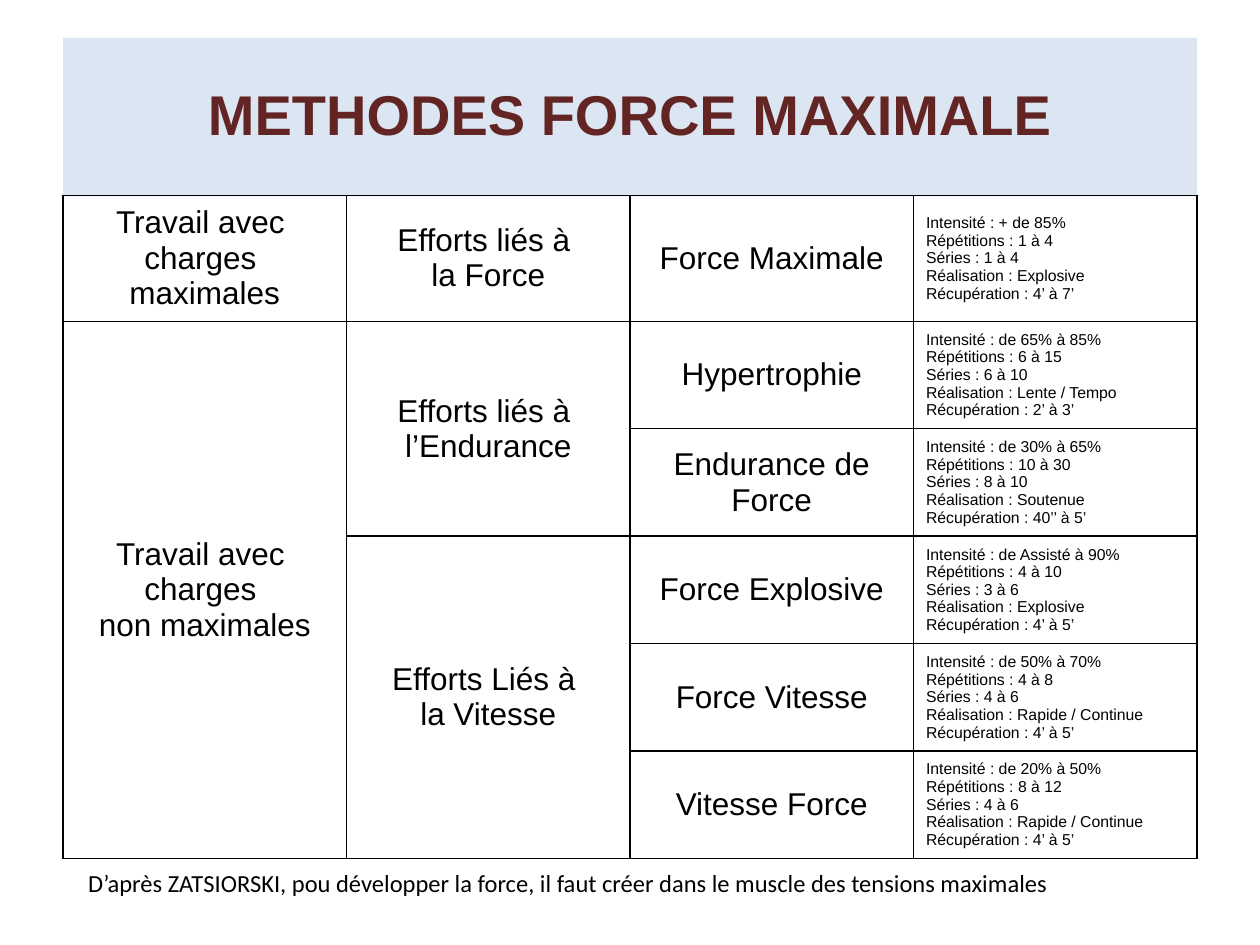
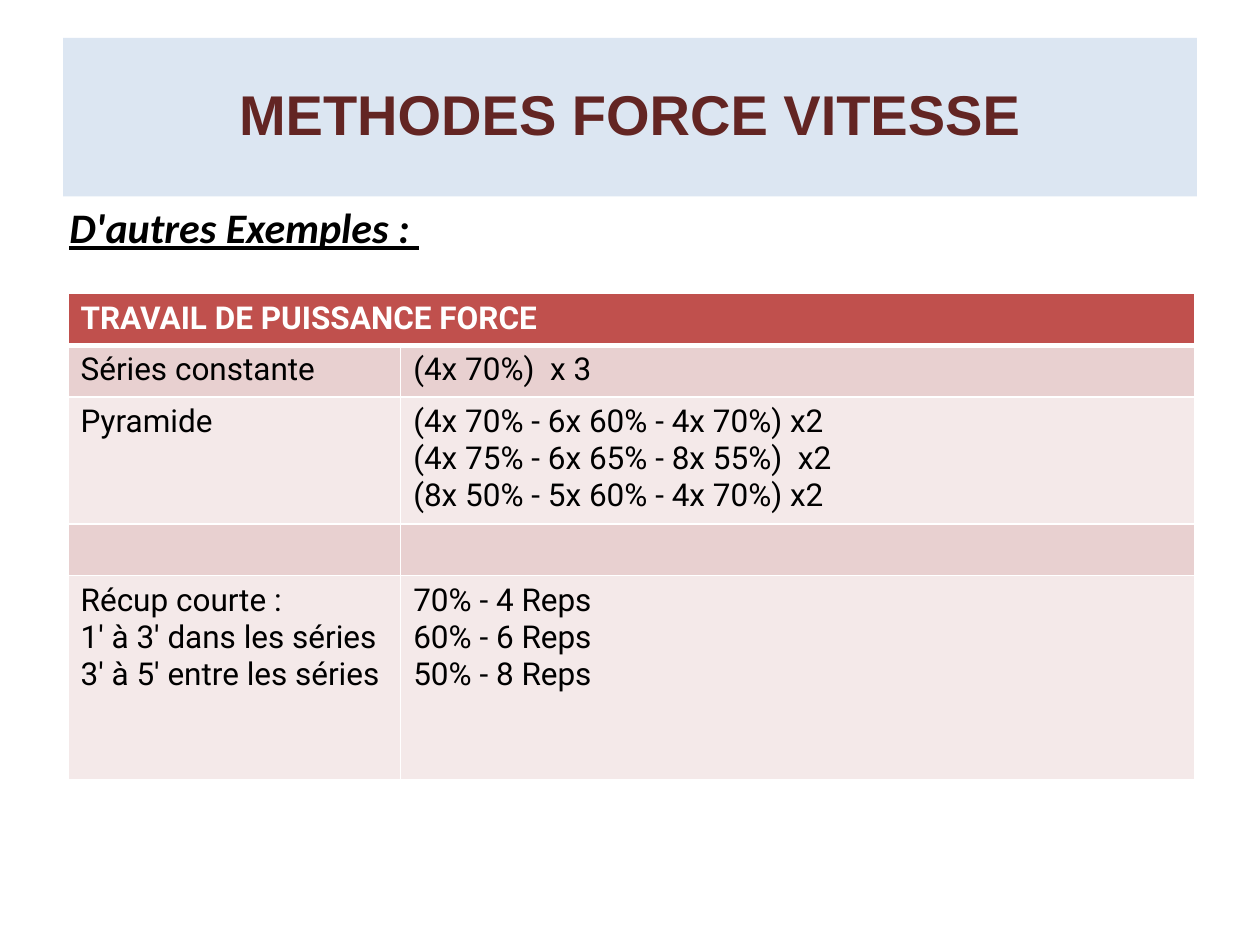
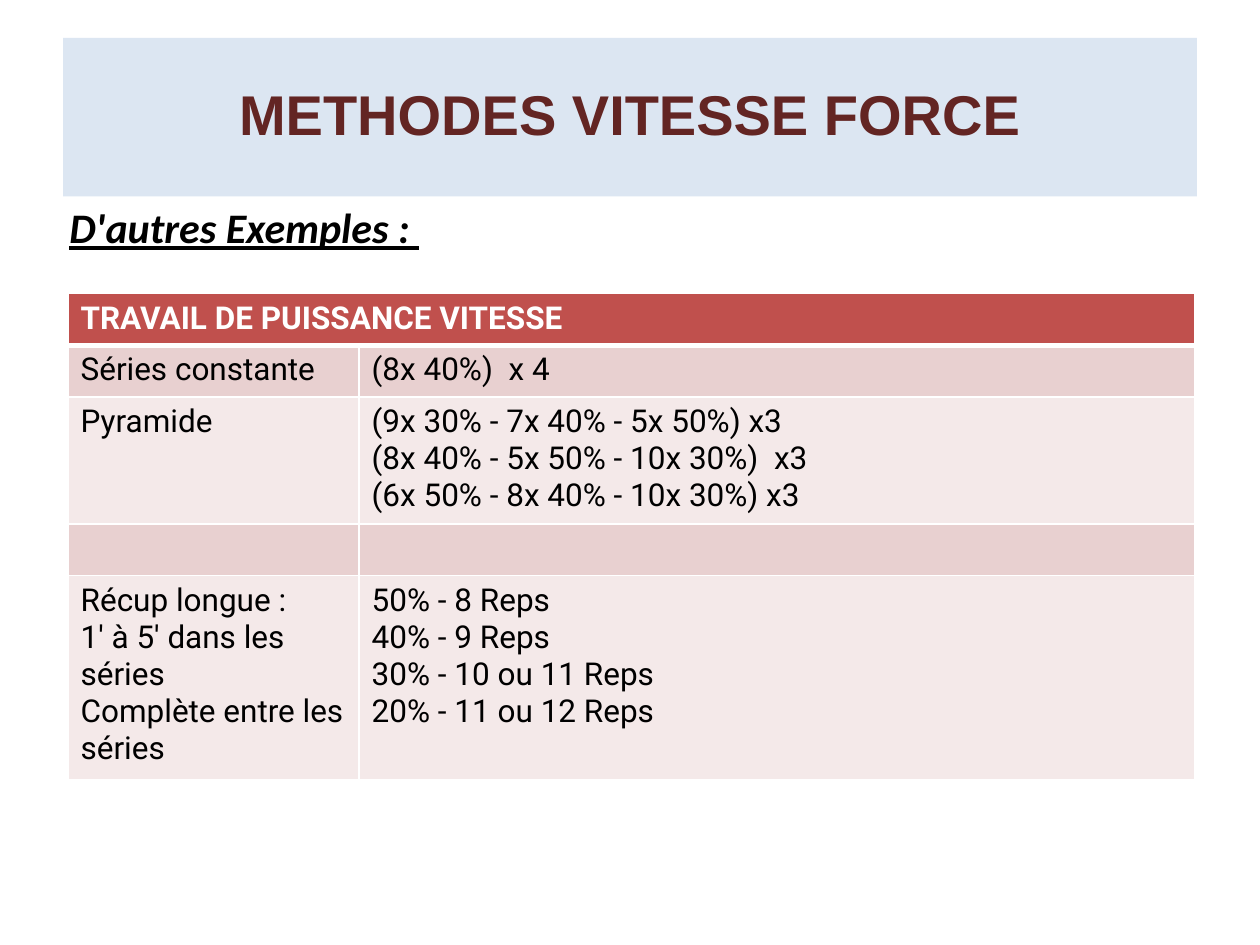
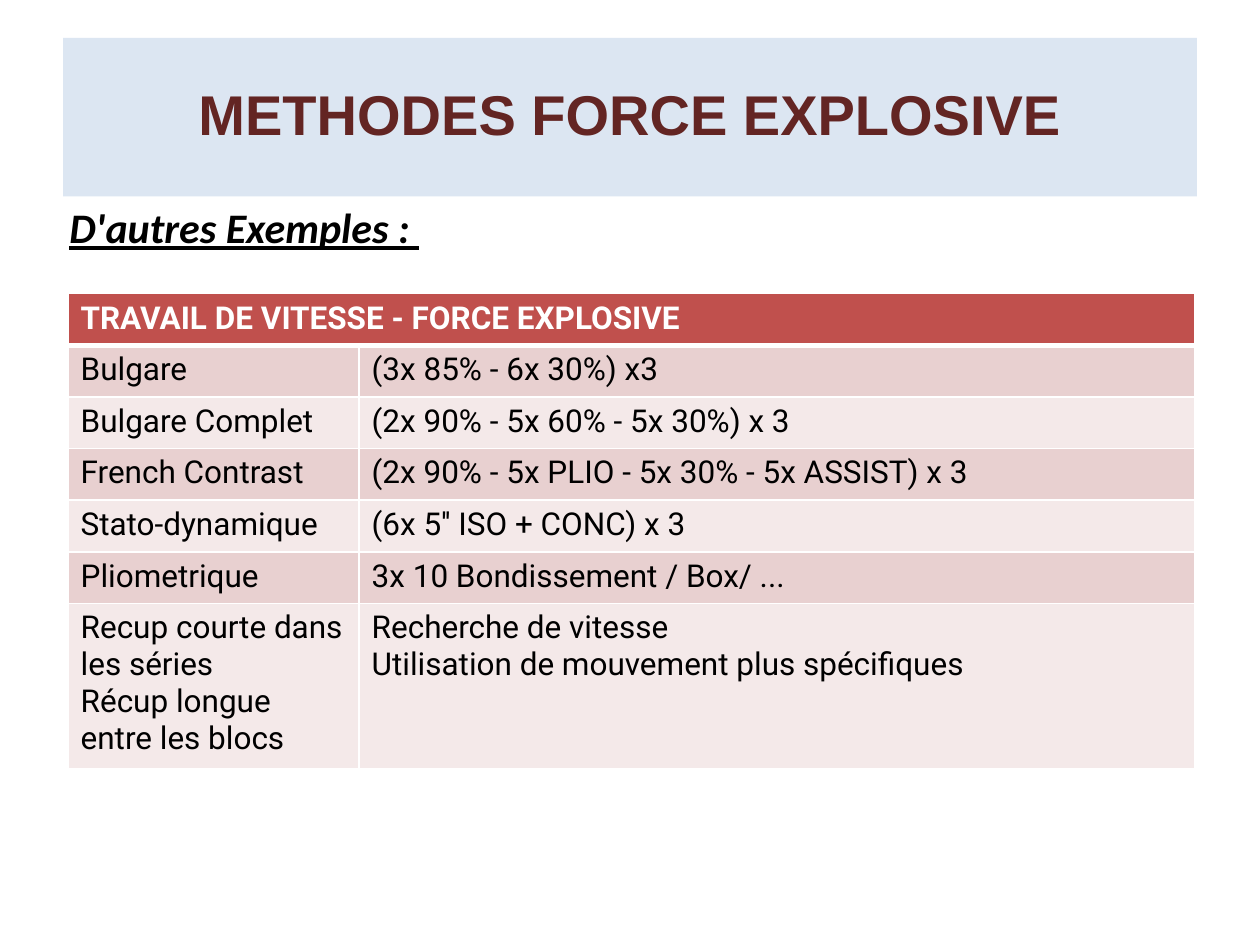
from lxml import etree
from pptx import Presentation
from pptx.dml.color import RGBColor
from pptx.enum import text
from pptx.oxml import ns
from pptx.util import Inches, Pt

BAND, WINE, RED = "DCE6F2", "632523", "C0504D"
DARK, PALE = "E8D0D0", "F4E9E9"
BLACK, WHITE = "000000", "FFFFFF"
LEFT, CENTER = text.PP_ALIGN.LEFT, text.PP_ALIGN.CENTER
TOP, MIDDLE = text.MSO_ANCHOR.TOP, text.MSO_ANCHOR.MIDDLE

GROUPS = [
    (0, 0, 1, ["Travail avec ", "charges ", "maximales"]),
    (1, 0, 5, ["Travail avec ", "charges ", "non maximales"]),
    (0, 1, 1, ["Efforts liés à ", "la Force"]),
    (1, 1, 2, ["Efforts liés à ", "l’Endurance"]),
    (3, 1, 3, ["Efforts Liés à ", "la Vitesse"]),
]
LABELS = ["Intensité", "Répétitions", "Séries", "Réalisation", "Récupération"]
METHODS = [
    ("Force Maximale", ["+ de 85%", "1 à 4", "1 à 4", "Explosive", "4’ à 7’"]),
    ("Hypertrophie", ["de 65% à 85%", "6 à 15", "6 à 10", "Lente / Tempo", "2’ à 3’"]),
    ("Endurance de Force", ["de 30% à 65%", "10 à 30", "8 à 10", "Soutenue", "40’’ à 5’"]),
    ("Force Explosive", ["de Assisté à 90%", "4 à 10", "3 à 6", "Explosive", "4’ à 5’"]),
    ("Force Vitesse", ["de 50% à 70%", "4 à 8", "4 à 6", "Rapide / Continue", "4’ à 5’"]),
    ("Vitesse Force", ["de 20% à 50%", "8 à 12", "4 à 6", "Rapide / Continue", "4’ à 5’"]),
]
NOTE = ("D’après ZATSIORSKI, pou développer la force, il faut créer "
        "dans le muscle des tensions maximales")
SAMPLES = [
    ("METHODES FORCE VITESSE", "TRAVAIL DE PUISSANCE FORCE", 2.64, [
        (0.41, ["Séries constante"], ["(4x 70%)  x 3"]),
        (1.01, ["Pyramide"], ["(4x 70% - 6x 60% - 4x 70%) x2",
                              "(4x 75% - 6x 65% - 8x 55%)  x2",
                              "(8x 50% - 5x 60% - 4x 70%) x2"]),
        (0.41, [], []),
        (1.62, ["Récup courte :", "1' à 3' dans les séries", "3' à 5' entre les séries"],
         ["70% - 4 Reps", "60% - 6 Reps", "50% - 8 Reps"]),
    ]),
    ("METHODES VITESSE FORCE", "TRAVAIL DE PUISSANCE VITESSE", 2.31, [
        (0.41, ["Séries constante"], ["(8x 40%)  x 4"]),
        (1.01, ["Pyramide"], ["(9x 30% - 7x 40% - 5x 50%) x3",
                              "(8x 40% - 5x 50% - 10x 30%)  x3",
                              "(6x 50% - 8x 40% - 10x 30%) x3"]),
        (0.41, [], []),
        (1.62, ["Récup longue :", "1' à 5' dans les séries", "Complète entre les séries"],
         ["50% - 8 Reps", "40% - 9 Reps", "30% - 10 ou 11 Reps", "20% - 11 ou 12 Reps"]),
    ]),
    ("METHODES FORCE EXPLOSIVE", "TRAVAIL DE VITESSE - FORCE EXPLOSIVE", 2.31, [
        (0.41, ["Bulgare"], ["(3x 85% - 6x 30%) x3"]),
        (0.41, ["Bulgare Complet"], ["(2x 90% - 5x 60% - 5x 30%) x 3"]),
        (0.41, ["French Contrast"], ["(2x 90% - 5x PLIO - 5x 30% - 5x ASSIST) x 3"]),
        (0.41, ["Stato-dynamique"], ["(6x 5'' ISO + CONC) x 3"]),
        (0.41, ["Pliometrique"], ["3x 10 Bondissement / Box/ ..."]),
        (1.31, ["Recup courte dans les séries", "Récup longue", "entre les blocs"],
         ["Recherche de vitesse", "Utilisation de mouvement plus spécifiques"]),
    ]),
]


def rgb(code):
    return RGBColor.from_string(code)


def write(frame, lines, size, face, color=BLACK, bold=False, align=LEFT):
    for num, line in enumerate(lines):
        para = frame.add_paragraph() if num else frame.paragraphs[0]
        para.alignment = align
        run = para.add_run()
        run.text = line
        font = run.font
        font.size, font.name, font.bold = Pt(size), face, bold
        font.color.rgb = rgb(color)
    return frame


def inset(frame, gap):
    frame.margin_left = frame.margin_right = Inches(gap)
    frame.margin_top = frame.margin_bottom = Inches(gap)
    frame.word_wrap = True


def start(deck, name):
    slide = deck.slides.add_slide(deck.slide_layouts[5])
    title = slide.shapes.title
    title.left, title.top = Inches(0.5), Inches(0.3)
    title.width, title.height = Inches(9), Inches(1.26)
    title.fill.solid()
    title.fill.fore_color.rgb = rgb(BAND)
    frame = title.text_frame
    inset(frame, 0)
    frame.vertical_anchor = MIDDLE
    write(frame, [name], 32, "Arial", WINE, True, CENTER)
    frame.paragraphs[0].line_spacing = 0.9
    return slide


def note(slide, left, top, high, line, size, bold=False):
    box = slide.shapes.add_textbox(Inches(left), Inches(top), Inches(9), Inches(high))
    inset(box.text_frame, 0.05)
    write(box.text_frame, [line], size, "Calibri", bold=bold)
    return box.text_frame.paragraphs[0].runs[0].font


def grid(slide, left, top, cols, rows):
    frame = slide.shapes.add_table(len(rows), len(cols), Inches(left), Inches(top),
                                   Inches(sum(cols)), Inches(sum(rows)))
    table = frame.table
    table.first_row = table.horz_banding = False
    for col, wide in zip(table.columns, cols):
        col.width = Inches(wide)
    for row, high in zip(table.rows, rows):
        row.height = Inches(high)
    return table


def edge(cell, color, **wide):
    props = cell._tc.get_or_add_tcPr()
    for side in "LRTB":
        line = etree.SubElement(props, ns.qn("a:ln" + side), w=str(Pt(wide.get(side, 1))))
        fill = etree.SubElement(line, ns.qn("a:solidFill"))
        etree.SubElement(fill, ns.qn("a:srgbClr"), val=color)


def paint(cell, color):
    cell.fill.solid()
    cell.fill.fore_color.rgb = rgb(color)


def overview(deck):
    slide = start(deck, "METHODES FORCE MAXIMALE")
    note(slide, 0.65, 6.84, 0.34, NOTE, 14)
    table = grid(slide, 0.5, 1.55, [2.25] * 4, [1] + [0.85] * 5)
    for cell in table.iter_cells():
        edge(cell, BLACK)
        cell.fill.background()
        cell.vertical_anchor = MIDDLE
    for row, col, span, lines in GROUPS:
        cell = table.cell(row, col)
        if span > 1:
            cell.merge(table.cell(row + span - 1, col))
        write(cell.text_frame, lines, 18, "Arial", align=CENTER)
    for row, (name, values) in enumerate(METHODS):
        write(table.cell(row, 2).text_frame, [name], 18, "Arial", align=CENTER)
        facts = [f"{label} : {value}" for label, value in zip(LABELS, values)]
        write(table.cell(row, 3).text_frame, facts, 9, "Arial")


def sample(deck, name, head, first, rows):
    slide = start(deck, name)
    font = note(slide, 0.5, 1.55, 0.5, "D'autres Exemples : ", 24, True)
    font.italic = font.underline = True
    table = grid(slide, 0.54, 2.33, [first, 8.94 - first], [0.41] + [row[0] for row in rows])
    for col in range(2):
        edge(table.cell(0, col), WHITE, B=3)
        paint(table.cell(0, col), RED)
    table.cell(0, 0).merge(table.cell(0, 1))
    write(table.cell(0, 0).text_frame, [head], 18, "Roboto", WHITE, True)
    for num, (_, *cells) in enumerate(rows, 1):
        for col, lines in enumerate(cells):
            cell = table.cell(num, col)
            edge(cell, WHITE, T=3 if num == 1 else 1)
            paint(cell, DARK if num % 2 else PALE)
            cell.vertical_anchor = TOP
            write(cell.text_frame, lines, 18, "Roboto")


def main():
    deck = Presentation()
    deck.slide_width, deck.slide_height = Inches(10), Inches(7.5)
    overview(deck)
    for item in SAMPLES:
        sample(deck, *item)
    deck.save("out.pptx")


if __name__ == "__main__":
    main()
